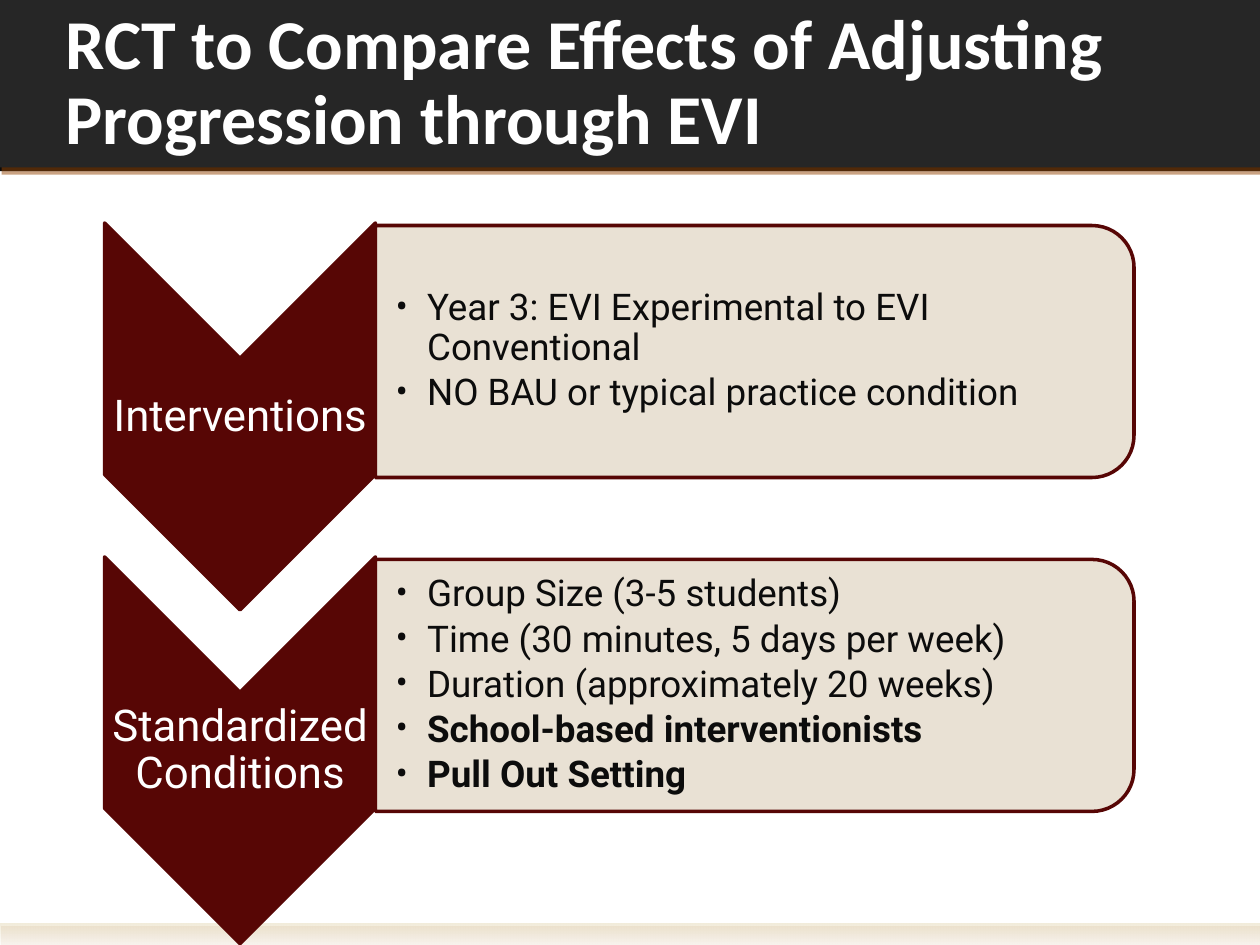
from dataclasses import dataclass

from lxml import etree
from pptx import Presentation
from pptx.dml.color import RGBColor
from pptx.enum.shapes import MSO_SHAPE
from pptx.enum.text import MSO_ANCHOR, PP_ALIGN
from pptx.oxml.ns import qn
from pptx.shapes.autoshape import Shape
from pptx.slide import Slide
from pptx.util import Emu, Inches, Pt

RECTANGLE = MSO_SHAPE.RECTANGLE
CHEVRON = MSO_SHAPE.CHEVRON
ROUNDED_TOP = MSO_SHAPE.ROUND_2_SAME_RECTANGLE
MIDDLE, BOTTOM = MSO_ANCHOR.MIDDLE, MSO_ANCHOR.BOTTOM
LEFT, CENTER = PP_ALIGN.LEFT, PP_ALIGN.CENTER

SLIDE_WIDTH, SLIDE_HEIGHT = Inches(10), Inches(7.5)
COLUMN, ROW = SLIDE_WIDTH / 100, SLIDE_HEIGHT / 75
SECTION_PITCH = 26.5  # rows from one section to the next


@dataclass(frozen=True)
class Theme:
    white: str = "FFFFFF"
    ink: str = "0C0C0C"
    header: str = "262626"
    maroon: str = "570605"
    panel: str = "E7DED0"
    footer_top: str = "F0E9D4"
    footer_bottom: str = "FDFCF9"
    shadow: str = "974706"
    title_font: str = "Calibri"
    body_font: str = "Roboto"
    title_size: int = 40
    label_size: int = 25
    bullet_size: int = 21


@dataclass(frozen=True)
class Box:
    """Left, top, width and height in grid columns and rows."""
    left: float
    top: float
    width: float
    height: float

    def down(self, rows: float) -> "Box":
        return Box(self.left, self.top + rows, self.width, self.height)

    def turned(self) -> "Box":
        """Frame that covers this box once it is rotated by 90 degrees."""
        shift = (self.width - self.height) / 2
        return Box(self.left + shift, self.top - shift, self.height, self.width)

    def lengths(self) -> tuple[Emu, ...]:
        return tuple(Emu(round(value * unit)) for value, unit in (
            (self.left, COLUMN), (self.top, ROW), (self.width, COLUMN), (self.height, ROW)))


@dataclass(frozen=True)
class Line:
    text: str
    bold: bool = False


@dataclass(frozen=True)
class TextStyle:
    font: str
    size: int
    color: str
    anchor: MSO_ANCHOR
    alignment: PP_ALIGN = LEFT
    insets: tuple[float, float, float, float] = (0.1, 0.05, 0.1, 0.05)
    space_after: float = 0
    bulleted: bool = False


@dataclass(frozen=True)
class Section:
    label: str
    bullets: tuple[Line, ...]


THEME = Theme()
TITLE_STYLE = TextStyle(THEME.title_font, THEME.title_size, THEME.white, BOTTOM)
LABEL_STYLE = TextStyle(THEME.body_font, THEME.label_size, THEME.white, MIDDLE, CENTER,
                        (0.02, 0.02, 0.02, 0.02))
BULLET_STYLE = TextStyle(THEME.body_font, THEME.bullet_size, THEME.ink, MIDDLE, LEFT,
                         (0.16, 0.01, 0.01, 0.01), 3.2, True)

PAGE = Box(0, 0, 100, 75)
HEADER_EDGE = Box(0, 0.3, 100, 13.3)
HEADER = Box(0, 0, 100, 13.3)
FOOTER = Box(0, 73.3, 100, 1.7)
TITLE = Box(4.2, 0.1, 92.5, 13.1)
ARROW = Box(8.3, 17.7, 21.5, 30.7)
LABEL = Box(8.3, 28.5, 21.5, 9.2)
PANEL = Box(29.8, 17.9, 60.2, 20)
BULLETS = Box(29.8, 18.9, 59.2, 18)

SECTIONS = (
    Section("Interventions", (
        Line("Year 3: EVI Experimental to EVI Conventional"),
        Line("NO BAU or typical practice condition"),
    )),
    Section("Standardized Conditions", (
        Line("Group Size (3-5 students)"),
        Line("Time (30 minutes, 5 days per week)"),
        Line("Duration (approximately 20 weeks)"),
        Line("School-based interventionists", True),
        Line("Pull Out Setting", True),
    )),
)


def set_opacity(shape: Shape, *percents: int) -> None:
    """Give each fill colour of the shape, in order, its opacity."""
    fill = shape.fill._xPr
    for color, percent in zip(fill.iter(qn("a:srgbClr")), percents):
        etree.SubElement(color, qn("a:alpha"), val=str(percent * 1000))


def add_shadow(shape: Shape) -> None:
    effects = shape._element.spPr.find(qn("a:effectLst"))
    shadow = etree.SubElement(effects, qn("a:outerShdw"), blurRad="0", dist=str(Pt(2.2)),
                              dir=str(63 * 60000), algn="ctr", rotWithShape="0")
    color = etree.SubElement(shadow, qn("a:srgbClr"), val=THEME.shadow)
    etree.SubElement(color, qn("a:alpha"), val="50000")


def add_band(slide: Slide, box: Box, color: str) -> Shape:
    shape = slide.shapes.add_shape(RECTANGLE, *box.lengths())
    shape.shadow.inherit = False
    shape.fill.solid()
    shape.fill.fore_color.rgb = RGBColor.from_string(color)
    shape.line.fill.background()
    return shape


def add_turned_shape(slide: Slide, kind: MSO_SHAPE, box: Box, color: str) -> Shape:
    shape = slide.shapes.add_shape(kind, *box.turned().lengths())
    shape.rotation = 90
    shape.shadow.inherit = False
    shape.fill.solid()
    shape.fill.fore_color.rgb = RGBColor.from_string(color)
    shape.line.color.rgb = RGBColor.from_string(THEME.maroon)
    shape.line.width = Pt(2)
    return shape


def add_text(slide: Slide, box: Box, lines: tuple[Line, ...], style: TextStyle) -> None:
    frame = slide.shapes.add_textbox(*box.lengths()).text_frame
    left, top, right, bottom = map(Inches, style.insets)
    frame_format = {"word_wrap": True, "vertical_anchor": style.anchor, "margin_left": left,
                    "margin_top": top, "margin_right": right, "margin_bottom": bottom}
    for name, value in frame_format.items():
        setattr(frame, name, value)
    for index, line in enumerate(lines):
        paragraph = frame.add_paragraph() if index else frame.paragraphs[0]
        paragraph_format = {"alignment": style.alignment, "line_spacing": 0.9,
                            "space_after": Pt(style.space_after)}
        for name, value in paragraph_format.items():
            setattr(paragraph, name, value)
        if style.bulleted:
            properties = paragraph._p.get_or_add_pPr()
            properties.set("marL", str(Inches(0.25)))
            properties.set("indent", str(-Inches(0.25)))
            etree.SubElement(properties, qn("a:buFont"), typeface=style.font)
            etree.SubElement(properties, qn("a:buChar"), char="•")
        run = paragraph.add_run()
        run.text = line.text
        font_format = {"name": style.font, "size": Pt(style.size), "bold": line.bold}
        for name, value in font_format.items():
            setattr(run.font, name, value)
        run.font.color.rgb = RGBColor.from_string(style.color)


def add_footer(slide: Slide) -> None:
    footer = add_band(slide, FOOTER, THEME.footer_top)
    footer.fill.gradient()
    footer.fill.gradient_angle = 270
    for stop, color in zip(footer.fill.gradient_stops, (THEME.footer_top, THEME.footer_bottom)):
        stop.color.rgb = RGBColor.from_string(color)
    set_opacity(footer, 82, 90)
    add_shadow(footer)


def add_section(slide: Slide, section: Section, offset: float) -> None:
    add_turned_shape(slide, CHEVRON, ARROW.down(offset), THEME.maroon)
    add_text(slide, LABEL.down(offset), (Line(section.label),), LABEL_STYLE)
    panel = add_turned_shape(slide, ROUNDED_TOP, PANEL.down(offset), THEME.panel)
    set_opacity(panel, 90)
    add_text(slide, BULLETS.down(offset), section.bullets, BULLET_STYLE)


def main() -> None:
    presentation = Presentation()
    presentation.slide_width, presentation.slide_height = SLIDE_WIDTH, SLIDE_HEIGHT
    slide = presentation.slides.add_slide(presentation.slide_layouts[6])
    add_band(slide, PAGE, THEME.white)
    add_shadow(add_band(slide, HEADER_EDGE, THEME.ink))
    add_footer(slide)
    add_shadow(add_band(slide, HEADER, THEME.header))
    title = Line("RCT to Compare Effects of Adjusting Progression through EVI", True)
    add_text(slide, TITLE, (title,), TITLE_STYLE)
    for index, section in enumerate(SECTIONS):
        add_section(slide, section, index * SECTION_PITCH)
    presentation.save("out.pptx")


if __name__ == "__main__":
    main()
